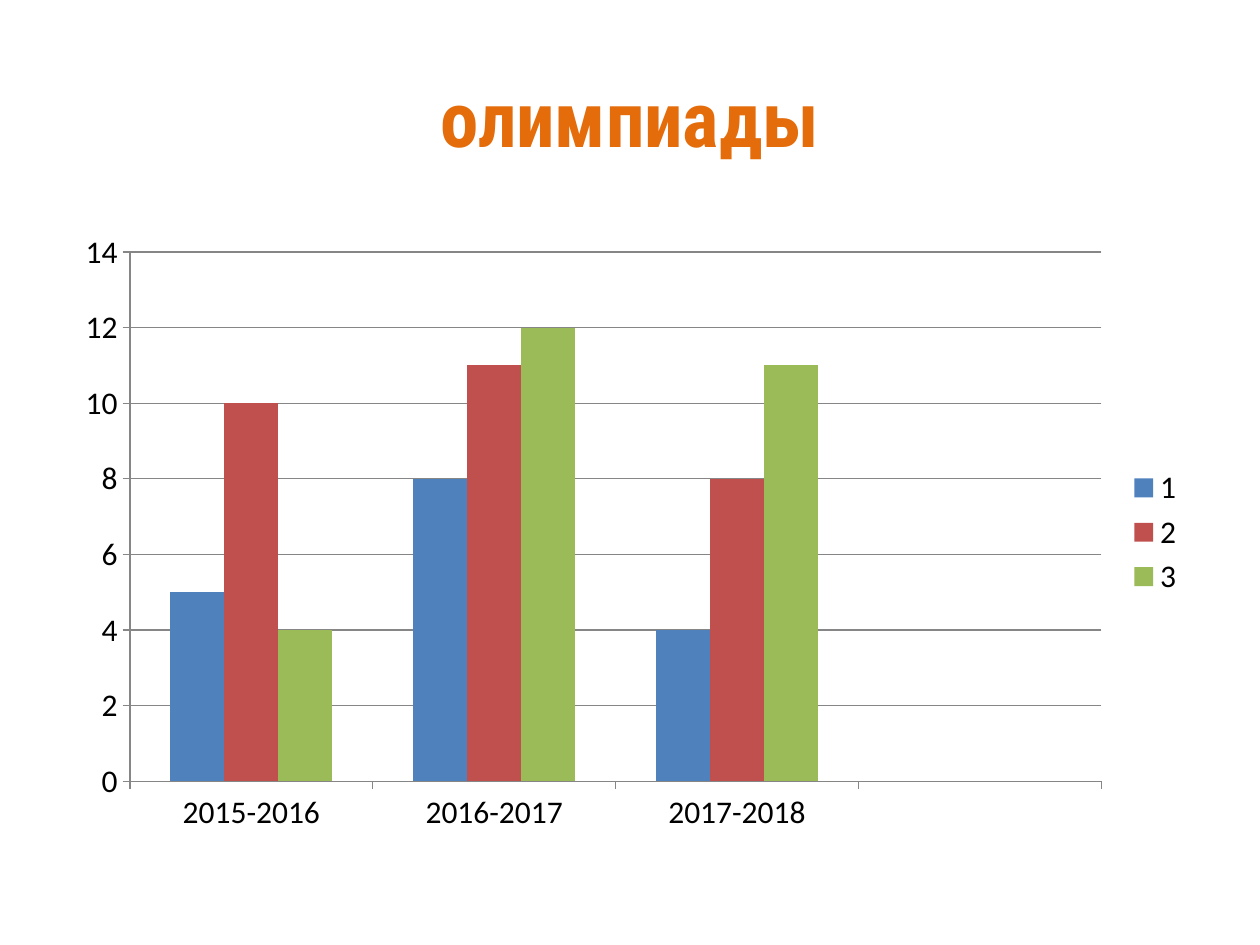
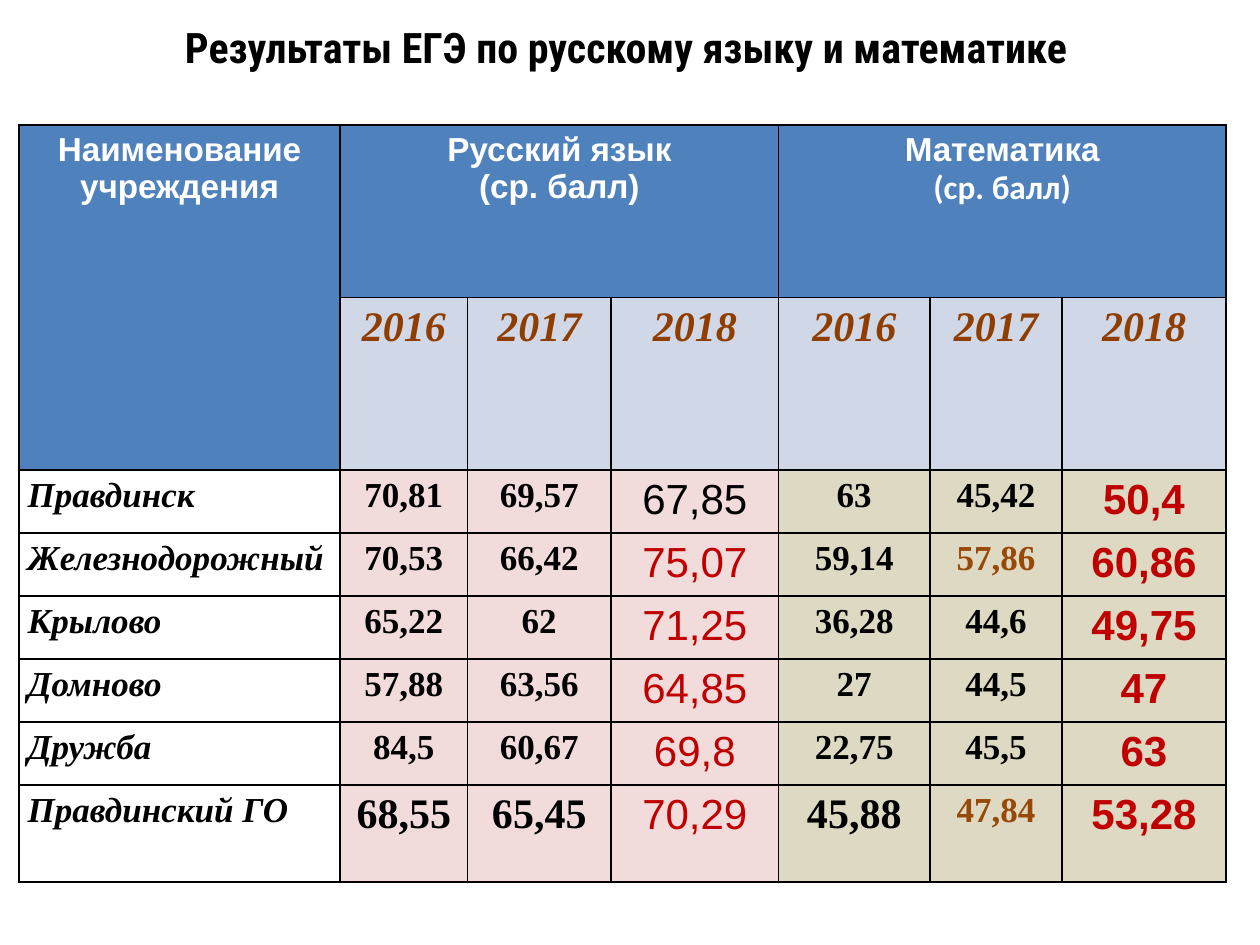
import pptx
import pptx.util
import pptx.dml.color
import pptx.chart.data
import pptx.enum.chart
import pptx.enum.text
import pptx.oxml
import pptx.oxml.ns

SCALE = 9144
COLORS = {
    "white": "FFFFFF", "black": "000000", "orange": "E46C0A", "brown": "903E00",
    "ochre": "984807", "red": "C00000", "blue": "4F81BD", "brick": "C0504D",
    "green": "9BBB59", "pale_blue": "D0D8E8", "pink": "F2DCDB",
    "sand": "DDD9C3", "gray": "868686",
}
TITLE_FONT, SANS, BODY, SERIF = "Roboto Condensed", "Arial", "Calibri", "Times New Roman"
ALIGN = pptx.enum.text.PP_ALIGN


def px(length):
    return pptx.util.Emu(length * SCALE)


def rgb(name):
    return pptx.dml.color.RGBColor.from_string(COLORS[name])


def style_font(font, size, name, color, bold=False, italic=False):
    font.size = pptx.util.Pt(size)
    font.name = name
    font.color.rgb = rgb(color)
    font.bold = bold
    font.italic = italic


def add_text(para, text, align=ALIGN.CENTER, **font):
    para.alignment = align
    span = para.add_run()
    span.text = text
    style_font(span.font, **font)


class SlideBuilder:
    def __init__(self, width, height):
        self.deck = pptx.Presentation()
        self.deck.slide_width = px(width)
        self.deck.slide_height = px(height)
        self.page = None

    def new_page(self):
        self.page = self.deck.slides.add_slide(self.deck.slide_layouts[6])

    def title(self, text, left, top, width, height, size, color):
        box = self.page.shapes.add_textbox(px(left), px(top), px(width), px(height))
        frame = box.text_frame
        frame.word_wrap = True
        frame.vertical_anchor = pptx.enum.text.MSO_ANCHOR.MIDDLE
        add_text(frame.paragraphs[0], text, size=size, name=TITLE_FONT, color=color, bold=True)

    def column_chart(self, left, top, width, height, categories, series):
        data = pptx.chart.data.CategoryChartData()
        data.categories = categories
        for name, values, _ in series:
            data.add_series(name, values)
        kind = pptx.enum.chart.XL_CHART_TYPE.COLUMN_CLUSTERED
        chart = self.page.shapes.add_chart(
            kind, px(left), px(top), px(width), px(height), data).chart
        style_font(chart.font, 18, BODY, "black")
        chart.has_title = False
        chart.has_legend = True
        chart.legend.position = pptx.enum.chart.XL_LEGEND_POSITION.RIGHT
        chart.legend.include_in_layout = False
        plot = chart.plots[0]
        plot.gap_width = 150
        plot.overlap = 0
        plot.vary_by_categories = False
        for bars, (_, _, color) in zip(plot.series, series):
            bars.format.fill.solid()
            bars.format.fill.fore_color.rgb = rgb(color)
            bars.invert_if_negative = False
        for axis in (chart.category_axis, chart.value_axis):
            axis.major_tick_mark = pptx.enum.chart.XL_TICK_MARK.OUTSIDE
            self.gray_line(axis.format.line)
        chart.value_axis.minimum_scale = 0
        chart.value_axis.maximum_scale = 14
        chart.value_axis.major_unit = 2
        chart.value_axis.has_major_gridlines = True
        self.gray_line(chart.value_axis.major_gridlines.format.line)

    def gray_line(self, line):
        line.color.rgb = rgb("gray")
        line.width = pptx.util.Pt(0.75)

    def table(self, left, top, widths, heights):
        shape = self.page.shapes.add_table(
            len(heights), len(widths), px(left), px(top), px(sum(widths)), px(sum(heights)))
        table = shape.table
        table.first_row = False
        table.horz_banding = False
        for column, width in zip(table.columns, widths):
            column.width = px(width)
        for row, height in zip(table.rows, heights):
            row.height = px(height)
        for cell in table.iter_cells():
            self.border(cell)
            cell.fill.background()
        return table

    def border(self, cell):
        properties = cell._tc.get_or_add_tcPr()
        for side in ("lnL", "lnR", "lnT", "lnB"):
            properties.append(pptx.oxml.parse_xml(
                f'<a:{side} {pptx.oxml.ns.nsdecls("a")} w="12700"><a:solidFill>'
                f'<a:srgbClr val="{COLORS["black"]}"/></a:solidFill></a:{side}>'))

    def cell(self, cell, lines, fill=None, **text_format):
        cell.margin_left = cell.margin_right = px(7)
        cell.margin_top = cell.margin_bottom = px(5)
        if fill:
            cell.fill.solid()
            cell.fill.fore_color.rgb = rgb(fill)
        frame = cell.text_frame
        for index, line in enumerate(lines):
            para = frame.add_paragraph() if index else frame.paragraphs[0]
            add_text(para, line, **text_format)


def olympiads(builder):
    builder.new_page()
    builder.title("олимпиады", 50, 30, 900, 125, 44, "orange")
    builder.column_chart(
        50, 175, 900, 495, ["2015-2016", "2016-2017", "2017-2018", ""],
        [("1", [5, 8, 4, None], "blue"),
         ("2", [10, 11, 8, None], "brick"),
         ("3", [4, 12, 11, None], "green")])


def exam_results(builder):
    builder.new_page()
    builder.title("Результаты ЕГЭ по русскому языку и математике", 66, 16, 862, 42, 24, "black")
    results = [
        ("Правдинск", "70,81", "69,57", "67,85", "63", "45,42", "50,4"),
        ("Железнодорожный", "70,53", "66,42", "75,07", "59,14", "57,86", "60,86"),
        ("Крылово", "65,22", "62", "71,25", "36,28", "44,6", "49,75"),
        ("Домново", "57,88", "63,56", "64,85", "27", "44,5", "47"),
        ("Дружба", "84,5", "60,67", "69,8", "22,75", "45,5", "63"),
        ("Правдинский ГО", "68,55", "65,45", "70,29", "45,88", "47,84", "53,28"),
    ]
    table = builder.table(
        15, 99, [255, 101, 114, 133, 120, 105, 130], [137, 137] + [50] * 5 + [77])
    table.cell(0, 0).merge(table.cell(1, 0))
    header = dict(fill="blue", size=19, color="white", bold=True)
    builder.cell(table.cell(0, 0), ["Наименование", "учреждения"], name=SANS, **header)
    for column, subject in ((1, "Русский язык"), (4, "Математика")):
        table.cell(0, column).merge(table.cell(0, column + 2))
        builder.cell(table.cell(0, column), [subject, "(ср. балл)"], name=SANS, **header)
    math_note = table.cell(0, 4).text_frame.paragraphs[1].runs[0]
    math_note.font.name = BODY
    for column in range(1, 7):
        builder.cell(
            table.cell(1, column), [str(2016 + (column - 1) % 3)], fill="pale_blue",
            size=24, name=SERIF, color="brown", bold=True, italic=True)

    ochre_scores = {"57,86", "47,84"}
    large_totals = {"68,55", "65,45", "45,88"}
    for row, (school, *scores) in enumerate(results, start=2):
        builder.cell(
            table.cell(row, 0), [school], align=ALIGN.LEFT,
            size=20, name=SERIF, color="black", bold=True, italic=True)
        for column, score in enumerate(scores, start=1):
            is_latest = column % 3 == 0
            if is_latest:
                color = "black" if score == "67,85" else "red"
            else:
                color = "ochre" if score in ochre_scores else "black"
            builder.cell(
                table.cell(row, column), [score],
                fill="pink" if column <= 3 else "sand",
                size=24 if is_latest or score in large_totals else 20,
                name=SANS if is_latest else SERIF,
                color=color, bold=column != 3)


def main():
    builder = SlideBuilder(1000, 750)
    olympiads(builder)
    exam_results(builder)
    builder.deck.save("out.pptx")


if __name__ == "__main__":
    main()
